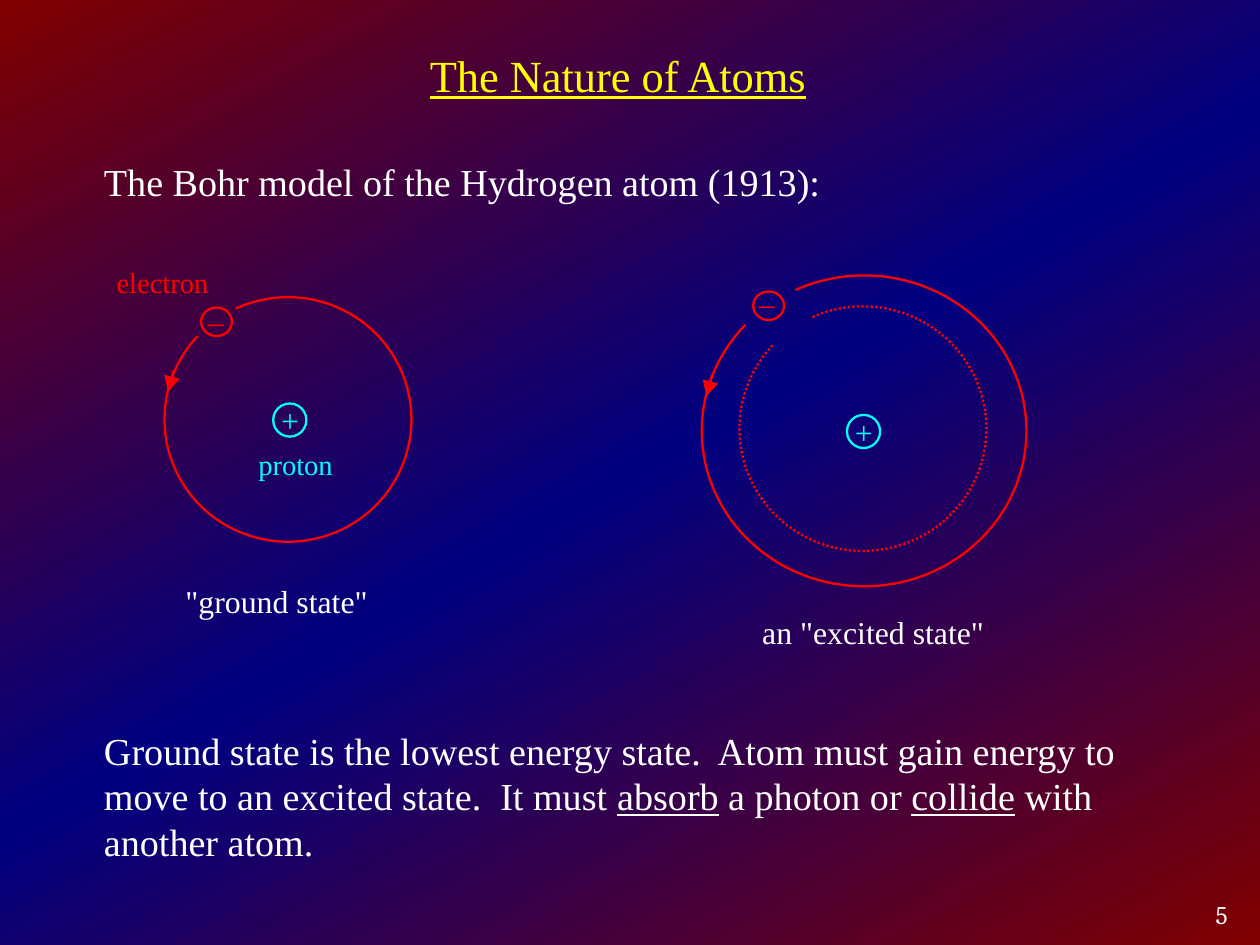
from copy import deepcopy
from math import cos, sin, radians
from lxml.etree import SubElement
from pptx import Presentation
from pptx.dml.color import RGBColor as RGB
from pptx.enum.dml import MSO_LINE as Dash
from pptx.enum.shapes import MSO_CONNECTOR as Link, MSO_SHAPE as Kind
from pptx.enum.text import MSO_ANCHOR as Anchor, MSO_AUTO_SIZE as Fit, PP_ALIGN as Align
from pptx.oxml import parse_xml
from pptx.oxml.ns import nsdecls, qn
from pptx.util import Inches, Pt

COLORS = {"title": "FFFF00", "text": "FFFFFF", "electron": "FF0000",
          "proton": "00FFFF", "edge": "800000", "middle": "000080"}


def write(box, place, text, size, color, align=Align.LEFT, face="Times New Roman"):
    """Place a box and fill it; words between bars are underlined."""
    box.left, box.top, box.width, box.height = map(Inches, place)
    frame = box.text_frame
    frame.word_wrap, frame.auto_size = True, Fit.NONE
    frame.vertical_anchor = Anchor.TOP
    frame.margin_left = frame.margin_right = frame.margin_top = frame.margin_bottom = 0
    para = frame.paragraphs[0]
    para.alignment, para.line_spacing, para.space_before = align, 1.0, Pt(0)
    para.font.name, para.font.size = face, Pt(size)
    para.font.color.rgb = RGB.from_string(COLORS[color])
    for count, piece in enumerate(text.split("|")):
        if piece:
            run = para.add_run()
            run.text = piece
            if count % 2:
                run.font.underline = True
    return para


def stroke(shape, color):
    """Give a plain outline without shadow."""
    shape.line.color.rgb = RGB.from_string(COLORS[color])
    shape.line.width = Pt(1.45)
    SubElement(shape._element.spPr, qn("a:effectLst"))


# Slide of 28 by 21 cm
deck = Presentation()
deck.slide_width, deck.slide_height = Inches(28 / 2.54), Inches(21 / 2.54)
slide = deck.slides.add_slide(deck.slide_layouts[1])
shapes = slide.shapes

# Background
fill = slide.background.fill
fill.gradient()
fill.gradient_angle = 300
stops = slide._element.find(".//" + qn("a:gsLst"))
stops.append(deepcopy(stops[0]))
for stop, (spot, color) in zip(fill.gradient_stops,
                               [(0, "edge"), (0.5, "middle"), (1, "edge")]):
    stop.position = spot
    stop.color.rgb = RGB.from_string(COLORS[color])

# Title and body
write(shapes.title, (3.76, 0.42, 3.45, 0.44), "|The Nature of Atoms|", 28, "title")
body = write(slide.placeholders[1], (0.91, 6.36, 9.15, 1.12),
             "Ground state is the lowest energy state.  Atom must gain energy to "
             "move to an excited state.  It must |absorb| a photon or |collide| "
             "with another atom.", 24, "text")
props = body._p.pPr
props.set("marL", "0")
props.set("indent", "0")
props.find(qn("a:defRPr")).addprevious(parse_xml(f"<a:buNone {nsdecls('a')}/>"))

# Orbits: centre, radii, dotted; each leaves a gap for the electron
for x, y, wide, high, dotted in [(2.52, 3.67, 1.08, 1.07, False),
                                 (7.56, 3.77, 1.42, 1.36, False),
                                 (7.55, 3.75, 1.08, 1.07, True)]:
    points = [(Inches(x + wide * cos(radians(turn))), Inches(y + high * sin(radians(turn))))
              for turn in range(223, -116, -2)]
    path = shapes.build_freeform(*points[0])
    path.add_line_segments(points[1:], close=False)
    orbit = path.convert_to_shape()
    orbit.fill.background()
    stroke(orbit, "electron")
    if dotted:
        orbit.line.dash_style = Dash.ROUND_DOT

# Particles: ring corner, ring size, sign, sign corner
for x, y, wide, high, sign, left, top, color in [
        (1.76, 2.69, 0.27, 0.25, "_", 1.82, 2.54, "electron"),
        (6.59, 2.55, 0.27, 0.25, "_", 6.64, 2.39, "electron"),
        (2.39, 3.53, 0.29, 0.29, "+", 2.46, 3.51, "proton"),
        (7.41, 3.63, 0.29, 0.29, "+", 7.48, 3.61, "proton")]:
    ring = shapes.add_shape(Kind.OVAL, *map(Inches, (x, y, wide, high)))
    ring.fill.background()
    stroke(ring, color)
    write(shapes.add_textbox(0, 0, 0, 0), (left, top, 0.24, 0.45), sign, 20, color)

# Arrows along the orbits
for x, y in [(1.52, 3.24), (6.23, 3.28)]:
    arrow = shapes.add_connector(Link.STRAIGHT,
                                 *map(Inches, (x, y, x - 0.05, y + 0.19)))
    stroke(arrow, "electron")
    SubElement(arrow.line._get_or_add_ln(), qn("a:tailEnd"),
               type="triangle", w="lg", len="lg")

# Labels
for place, text, size, color, align in [
        ((0.91, 1.39, 6.58, 0.4), "The Bohr model of the Hydrogen atom (1913):",
         24, "text", Align.LEFT),
        ((1.02, 2.32, 0.96, 0.34), "electron", 18, "electron", Align.LEFT),
        ((2.26, 3.91, 0.77, 0.28), "proton", 18, "proton", Align.LEFT),
        ((1.21, 5.09, 2.42, 0.31), '"ground state"', 20, "text", Align.CENTER),
        ((6.43, 5.36, 2.42, 0.31), 'an "excited state"', 20, "text", Align.CENTER)]:
    write(shapes.add_textbox(0, 0, 0, 0), place, text, size, color, align)

# Slide number
number = shapes.add_textbox(0, 0, 0, 0)
write(number, (8.27, 7.78, 2.57, 0.44), "5", 16, "text", Align.RIGHT, "Cambria")
number.text_frame.vertical_anchor = Anchor.MIDDLE
number.text_frame.margin_right = Inches(0.1)

deck.save("out.pptx")
